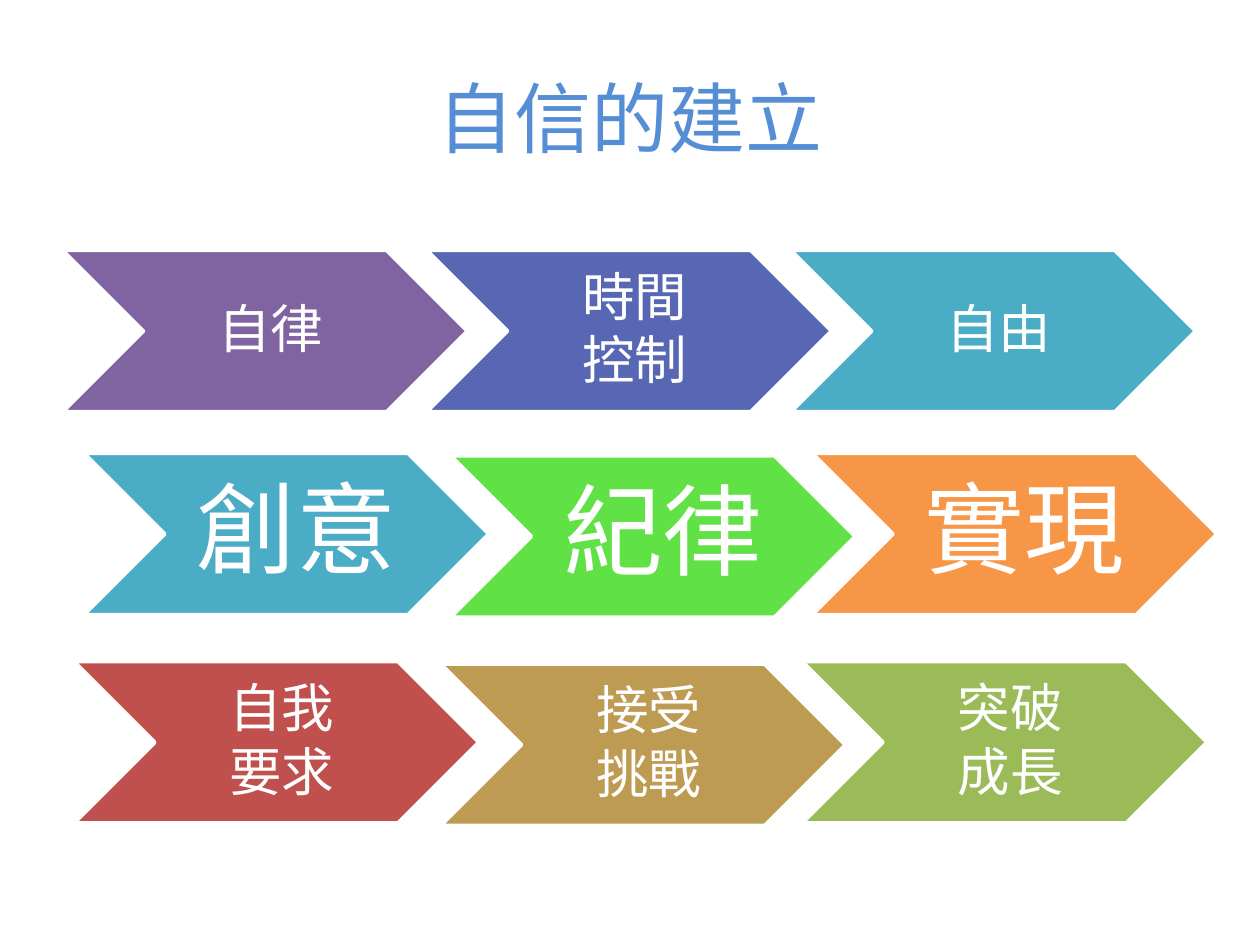
"""Build a slide with a title over three rows of chevrons."""
import pptx
import pptx.util
import pptx.dml.color
import pptx.enum.shapes
import pptx.enum.text

Cm, Pt = pptx.util.Cm, pptx.util.Pt
RGBColor = pptx.dml.color.RGBColor
ALIGN = pptx.enum.text.PP_ALIGN.CENTER
MIDDLE = pptx.enum.text.MSO_ANCHOR.MIDDLE

WHITE = RGBColor(0xFF, 0xFF, 0xFF)
BLUE = RGBColor(0x55, 0x8E, 0xD5)
PURPLE = RGBColor(0x80, 0x64, 0xA2)
INDIGO = RGBColor(0x57, 0x67, 0xB4)
TEAL = RGBColor(0x4B, 0xAC, 0xC6)
LIME = RGBColor(0x60, 0xE1, 0x46)
ORANGE = RGBColor(0xF7, 0x96, 0x46)
RED = RGBColor(0xC0, 0x50, 0x4D)
GOLD = RGBColor(0xBD, 0x9B, 0x53)
OLIVE = RGBColor(0x9B, 0xBB, 0x59)

TITLE = "自信的建立"
ROWS = [
    {"left": 1.27, "top": 5.05, "nudge": 0, "size": 30, "pad": 0.11,
     "steps": [("自律", PURPLE), ("時間\n控制", INDIGO), ("自由", TEAL)]},
    {"left": 1.7, "top": 9.14, "nudge": 0.05, "size": 57, "pad": 0.2,
     "steps": [("創意", TEAL), ("紀律", LIME), ("實現", ORANGE)]},
    {"left": 1.5, "top": 13.34, "nudge": 0.05, "size": 30, "pad": 0.11,
     "steps": [("自我\n要求", RED), ("接受\n挑戰", GOLD), ("突破\n成長", OLIVE)]},
]
WIDTH, HEIGHT, PITCH = 8.15, 3.25, 7.34


def apply(item, form):
    for key, value in form.items():
        setattr(item, key, value)


def write(frame, text, font, para, box):
    apply(frame, {"word_wrap": True, "vertical_anchor": MIDDLE, **box})
    frame.text = text
    for line in frame.paragraphs:
        apply(line, {"alignment": ALIGN, **para})
        tint = font["color"]
        for run in line.runs:
            apply(run.font, {"name": font["name"], "size": Pt(font["size"])})
            run.font.color.rgb = tint


def draw_step(slide, row, col, text, fill):
    shift = row["nudge"] if col == 1 else 0
    left = row["left"] + col * PITCH + shift
    step = slide.shapes.add_shape(
        pptx.enum.shapes.MSO_SHAPE.CHEVRON,
        Cm(left), Cm(row["top"] + shift), Cm(WIDTH), Cm(HEIGHT))
    step.shadow.inherit = False
    step.fill.solid()
    step.fill.fore_color.rgb = fill
    step.line.color.rgb = WHITE
    step.line.width = Pt(2)
    pad = Cm(row["pad"])
    box = {"margin_left": pad * 3, "margin_top": pad,
           "margin_right": pad, "margin_bottom": pad}
    font = {"name": "Calibri", "size": row["size"], "color": WHITE}
    write(step.text_frame, text, font,
          {"line_spacing": 0.9, "space_after": Pt(4)}, box)


def main():
    deck = pptx.Presentation()
    apply(deck, {"slide_width": Cm(25.4), "slide_height": Cm(19.05)})
    slide = deck.slides.add_slide(deck.slide_layouts[6])
    title = slide.shapes.add_textbox(Cm(1.27), Cm(0.76), Cm(22.86), Cm(3.18))
    write(title.text_frame, TITLE,
          {"name": "Noto Sans CJK JP", "size": 44, "color": BLUE}, {}, {})
    for row in ROWS:
        for col, (text, fill) in enumerate(row["steps"]):
            draw_step(slide, row, col, text, fill)
    deck.save("out.pptx")


if __name__ == "__main__":
    main()
